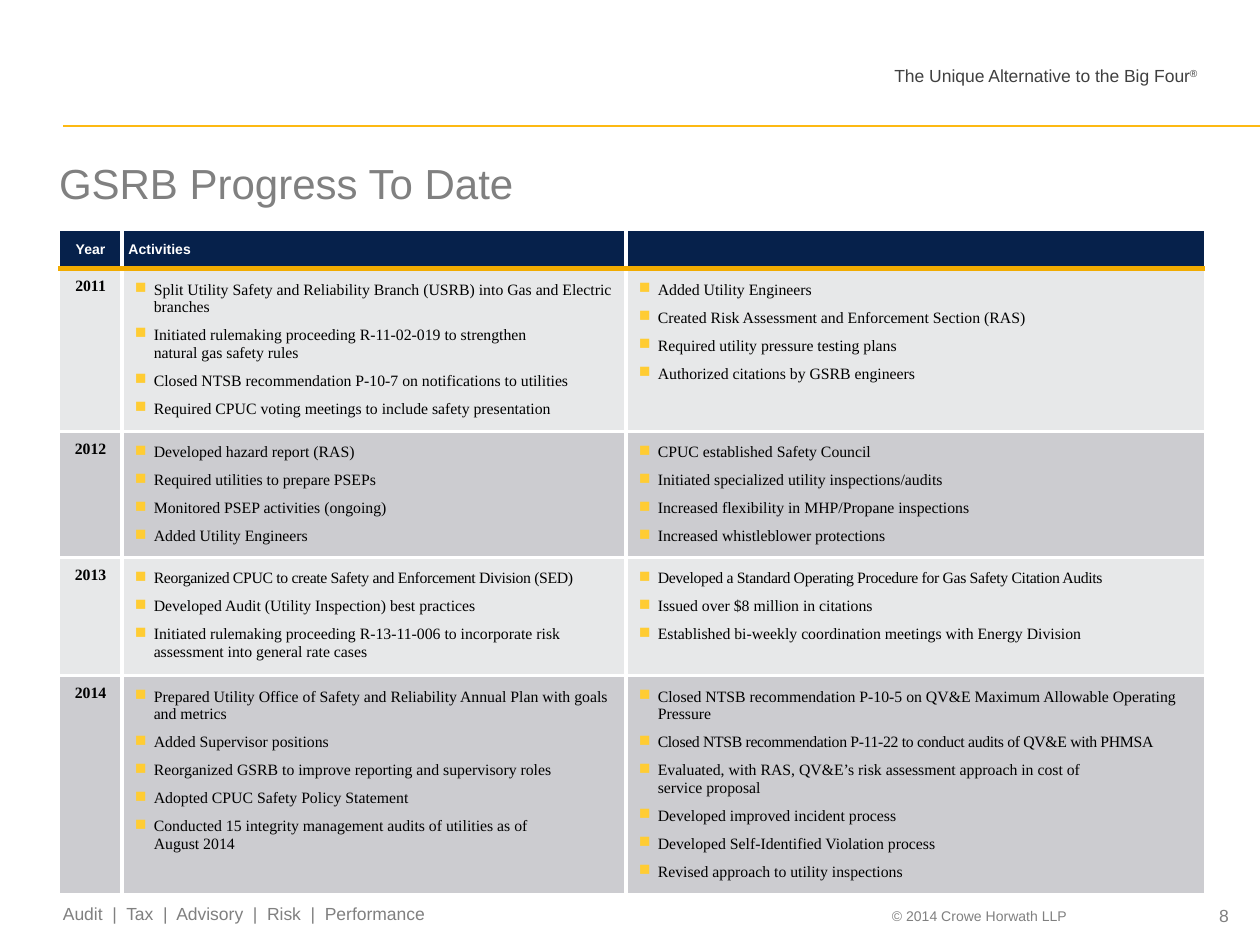
from dataclasses import dataclass

from lxml import etree
from pptx import Presentation
from pptx import util as u
from pptx.dml import color
from pptx.enum import shapes, text
from pptx.oxml import ns


@dataclass(frozen=True)
class Theme:
    """Colours, fonts and type sizes of the slide."""
    navy: str = "06214B"
    gold: str = "F1AB00"
    rule: str = "FDB913"
    bullet: str = "FFCC33"
    grey: str = "808080"
    dark: str = "404040"
    black: str = "000000"
    white: str = "FFFFFF"
    bands: tuple = ("E7E8E9", "CCCCD0")
    sans: str = "Arial"
    serif: str = "Times New Roman"
    title: float = 24
    label: float = 10
    body: float = 9
    small: float = 8


THEME = Theme()
COLUMNS = (1.27, 10.16, 11.66)
ROWS = (0.74, 3.28, 2.54, 2.39, 4.39)
HEADINGS = ("Year", "Activities", "")
PROGRESS = (
    ("2011",
     ("Split Utility Safety and Reliability Branch (USRB) into Gas and Electric branches",
      "Initiated rulemaking proceeding R-11-02-019 to strengthen \nnatural gas safety rules",
      "Closed NTSB recommendation P-10-7 on notifications to utilities",
      "Required CPUC voting meetings to include safety presentation"),
     ("Added Utility Engineers",
      "Created Risk Assessment and Enforcement Section (RAS)",
      "Required utility pressure testing plans",
      "Authorized citations by GSRB engineers")),
    ("2012",
     ("Developed hazard report (RAS)",
      "Required utilities to prepare PSEPs",
      "Monitored PSEP activities (ongoing)",
      "Added Utility Engineers"),
     ("CPUC established Safety Council",
      "Initiated specialized utility inspections/audits",
      "Increased flexibility in MHP/Propane inspections",
      "Increased whistleblower protections")),
    ("2013",
     ("Reorganized CPUC to create Safety and Enforcement Division (SED)",
      "Developed Audit (Utility Inspection) best practices",
      "Initiated rulemaking proceeding R-13-11-006 to incorporate risk "
      "assessment into general rate cases"),
     ("Developed a Standard Operating Procedure for Gas Safety Citation Audits",
      "Issued over $8 million in citations",
      "Established bi-weekly coordination meetings with Energy Division")),
    ("2014",
     ("Prepared Utility Office of Safety and Reliability Annual Plan with goals and metrics",
      "Added Supervisor positions",
      "Reorganized GSRB to improve reporting and supervisory roles",
      "Adopted CPUC Safety Policy Statement",
      "Conducted 15 integrity management audits of utilities as of \nAugust 2014"),
     ("Closed NTSB recommendation P-10-5 on QV&E Maximum Allowable Operating Pressure",
      "Closed NTSB recommendation P-11-22 to conduct audits of QV&E with PHMSA",
      "Evaluated, with RAS, QV&E’s risk assessment approach in cost of \nservice proposal",
      "Developed improved incident process",
      "Developed Self-Identified Violation process",
      "Revised approach to utility inspections")),
)
TIGHT = {PROGRESS[2][1][0], PROGRESS[2][2][0], PROGRESS[3][2][1]}


def write(paragraph, words, size=THEME.body, font=THEME.sans, fill=THEME.grey,
          bold=False, align=text.PP_ALIGN.LEFT, **attributes):
    """Add formatted words to a paragraph, breaking lines at newlines."""
    paragraph.alignment = align
    for index, line in enumerate(words.split("\n")):
        if index:
            paragraph.add_line_break()
        run = paragraph.add_run()
        run.text = line
        run.font.size, run.font.name, run.font.bold = u.Pt(size), font, bold
        run.font.color.rgb = color.RGBColor.from_string(fill)
        for name, value in attributes.items():
            run.font._element.set(name, value)


def add_label(slide, left, top, width, height, words, **style):
    """Add a text box without insets and return its paragraph."""
    shape = slide.shapes.add_textbox(*map(u.Cm, (left, top, width, height)))
    frame = shape.text_frame
    frame.word_wrap = True
    frame.margin_left = frame.margin_right = frame.margin_top = frame.margin_bottom = 0
    write(frame.paragraphs[0], words, **style)
    return frame.paragraphs[0]


def add_title(slide, words):
    """Place and format the title placeholder."""
    shape = slide.shapes.title
    shape.left, shape.top, shape.width, shape.height = map(u.Cm, (1.19, 2.74, 24.21, 1.9))
    frame = shape.text_frame
    frame.margin_left = frame.margin_right = frame.margin_top = frame.margin_bottom = 0
    frame.vertical_anchor = text.MSO_ANCHOR.MIDDLE
    write(frame.paragraphs[0], words, size=THEME.title)


def add_rule(slide):
    """Draw the thin line below the page header."""
    line = slide.shapes.add_connector(
        shapes.MSO_CONNECTOR.STRAIGHT, *map(u.Cm, (1.27, 2.54, 25.4, 2.54)))
    line.line.color.rgb = color.RGBColor.from_string(THEME.rule)
    line.line.width = u.Pt(0.75)
    etree.SubElement(line._element.spPr, ns.qn("a:effectLst"))


def set_borders(cell, row, column):
    """Give a cell white borders and the gold line below the headings."""
    outer, inner, heading = (THEME.white, 1), (THEME.white, 2.25), (THEME.gold, 3)
    borders = {
        "lnL": inner if column else outer,
        "lnR": inner if column < len(COLUMNS) - 1 else outer,
        "lnT": {0: outer, 1: heading}.get(row, inner),
        "lnB": {0: heading, len(ROWS) - 1: outer}.get(row, inner),
    }
    properties = cell._tc.get_or_add_tcPr()
    for index, (side, (fill, width)) in enumerate(borders.items()):
        border = etree.Element(ns.qn(f"a:{side}"), w=str(u.Pt(width)))
        solid = etree.SubElement(border, ns.qn("a:solidFill"))
        etree.SubElement(solid, ns.qn("a:srgbClr"), val=fill)
        properties.insert(index, border)


def write_bullets(cell, items):
    """Fill a cell with square-bulleted paragraphs."""
    cell.margin_top = u.Cm(0.25)
    for index, item in enumerate(items):
        frame = cell.text_frame
        paragraph = frame.add_paragraph() if index else frame.paragraphs[0]
        properties = paragraph._p.get_or_add_pPr()
        properties.set("marL", str(u.Cm(0.51)))
        properties.set("indent", str(u.Cm(-0.38)))
        tint = etree.SubElement(properties, ns.qn("a:buClr"))
        etree.SubElement(tint, ns.qn("a:srgbClr"), val=THEME.bullet)
        etree.SubElement(properties, ns.qn("a:buChar"), char="■")
        paragraph.line_spacing, paragraph.space_after = u.Pt(10), u.Pt(6)
        spacing = {"spc": "-20"} if item in TIGHT else {}
        write(paragraph, item, font=THEME.serif, fill=THEME.black, **spacing)


def style_cell(cell, row, column):
    """Set the fill, insets and borders of a cell."""
    cell.fill.solid()
    fill = THEME.bands[(row - 1) % 2] if row else THEME.navy
    cell.fill.fore_color.rgb = color.RGBColor.from_string(fill)
    cell.margin_left = cell.margin_right = u.Cm(0.13)
    cell.margin_top = cell.margin_bottom = 0
    set_borders(cell, row, column)


def add_progress_table(slide):
    """Add the table of activities by year."""
    table = slide.shapes.add_table(
        len(ROWS), len(COLUMNS),
        *map(u.Cm, (1.19, 4.65, sum(COLUMNS), sum(ROWS)))).table
    table.first_row = table.horz_banding = False
    for column, width in zip(table.columns, COLUMNS):
        column.width = u.Cm(width)
    for row, height in zip(table.rows, ROWS):
        row.height = u.Cm(height)
    for row, entries in enumerate((HEADINGS,) + PROGRESS):
        for column, entry in enumerate(entries):
            cell = table.cell(row, column)
            style_cell(cell, row, column)
            paragraph = cell.text_frame.paragraphs[0]
            align = text.PP_ALIGN.LEFT if column else text.PP_ALIGN.CENTER
            if row == 0:
                cell.vertical_anchor = text.MSO_ANCHOR.MIDDLE
                write(paragraph, entry, size=THEME.small, fill=THEME.white,
                      bold=True, align=align)
            elif column == 0:
                paragraph.line_spacing = 1.5
                write(paragraph, entry, font=THEME.serif, fill=THEME.black,
                      bold=True, align=align)
            else:
                write_bullets(cell, entry)


def main():
    """Build and save the presentation."""
    presentation = Presentation()
    presentation.slide_width, presentation.slide_height = u.Cm(25.4), u.Cm(19.05)
    slide = presentation.slides.add_slide(presentation.slide_layouts[5])
    header = {"size": THEME.label, "fill": THEME.dark}
    tagline = add_label(slide, 18.03, 1.31, 6.6, 0.5,
                        "The Unique Alternative to the Big Four", **header)
    write(tagline, "®", baseline="30000", **header)
    add_rule(slide)
    add_label(slide, 17.98, 18.29, 3.81, 0.33, "© 2014 Crowe Horwath LLP", size=THEME.small)
    add_label(slide, 23.5, 18.24, 1.27, 0.43, "8", size=THEME.label,
              align=text.PP_ALIGN.RIGHT)
    add_label(slide, 1.27, 18.21, 8.46, 0.43,
              "Audit  |  Tax  |  Advisory  |  Risk  |  Performance", size=THEME.label)
    add_title(slide, "GSRB Progress To Date")
    add_progress_table(slide)
    presentation.save("out.pptx")


if __name__ == "__main__":
    main()
